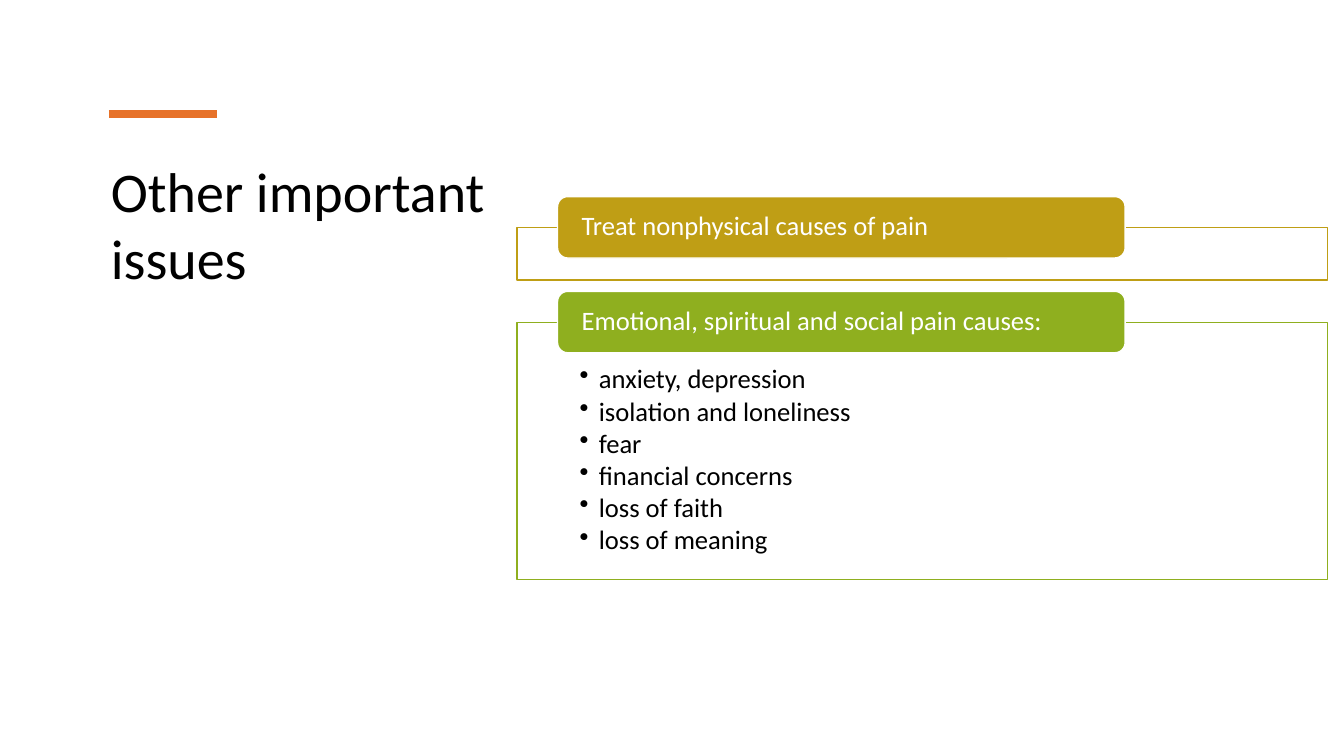
import pptx
import pptx.dml.color
import pptx.enum.shapes
import pptx.enum.text
import pptx.oxml.ns
import pptx.util
import lxml.etree

SCALE = 9144  # EMU per px, 100 px to the inch
COLORS = {"gold": "BF9E15", "green": "8FAF1F", "orange": "E77229",
          "white": "FFFFFF", "black": "000000"}
KIND = pptx.enum.shapes.MSO_SHAPE
ANCHOR = pptx.enum.text.MSO_ANCHOR
qn = pptx.oxml.ns.qn


def px(*nums):
    return [pptx.util.Emu(num * SCALE) for num in nums]


def write(shape, lines, size=19, color="white", anchor=ANCHOR.MIDDLE,
          inset=(21, 0, 21, 0), space=0.9, after=0, bullet=False):
    frame = shape.text_frame
    frame.word_wrap = True
    frame.auto_size = pptx.enum.text.MSO_AUTO_SIZE.NONE
    frame.vertical_anchor = anchor
    (frame.margin_left, frame.margin_top,
     frame.margin_right, frame.margin_bottom) = px(*inset)
    frame.text = "\n".join(lines)
    for para in frame.paragraphs:
        para.alignment = pptx.enum.text.PP_ALIGN.LEFT
        para.line_spacing = space
        para.space_after = pptx.util.Pt(after)
        para.font.size = pptx.util.Pt(size)
        para.font.name = "Calibri"
        para.font.color.rgb = rgb[color]
        if bullet:
            props = para._p.get_or_add_pPr()
            indent = px(19)[0]
            props.set("marL", str(indent))
            props.set("indent", str(-indent))
            mark = lxml.etree.Element(qn("a:buChar"), char="•")
            props.find(qn("a:defRPr")).addprevious(mark)


rgb = {name: pptx.dml.color.RGBColor.from_string(code)
       for name, code in COLORS.items()}
deck = pptx.Presentation()
deck.slide_width, deck.slide_height = px(1333, 750)
slide = deck.slides.add_slide(deck.slide_layouts[5])
shapes = slide.shapes

title = shapes.title
title.left, title.top, title.width, title.height = px(100, 150, 473, 295)
write(title, ["Other important issues"], size=40, color="black",
      anchor=ANCHOR.TOP, inset=(10, 5, 10, 5), space=1.0)

accent = shapes.add_connector(pptx.enum.shapes.MSO_CONNECTOR.STRAIGHT,
                              *px(108, 113, 215, 113))
accent.line.color.rgb = rgb["orange"]
accent.line.width = pptx.util.Pt(6)
lxml.etree.SubElement(accent._element.spPr, qn("a:effectLst"))

groups = [
    (226, 52, "gold", "Treat nonphysical causes of pain", []),
    (320, 255, "green", "Emotional, spiritual and social pain causes:",
     ["anxiety, depression", "isolation and loneliness", "fear",
      "financial concerns", "loss of faith", "loss of meaning"]),
]
for top, height, color, head, items in groups:
    box = shapes.add_shape(KIND.RECTANGLE, *px(513, top, 804, height))
    label = shapes.add_shape(KIND.ROUNDED_RECTANGLE,
                             *px(553, top - 31, 563, 61))
    for shape, fill, line in (box, "white", color), (label, color, "white"):
        shape.shadow.inherit = False
        shape.fill.solid()
        shape.fill.fore_color.rgb = rgb[fill]
        shape.line.color.rgb = rgb[line]
        shape.line.width = pptx.util.Pt(1)
    tint = box._element.spPr.find(qn("a:solidFill"))[0]
    lxml.etree.SubElement(tint, qn("a:alpha"), val="90000")
    write(label, [head])
    if items:
        write(box, items, color="black", anchor=ANCHOR.TOP,
              inset=(62, 43, 62, 15), after=2.5, bullet=True)

deck.save("out.pptx")
